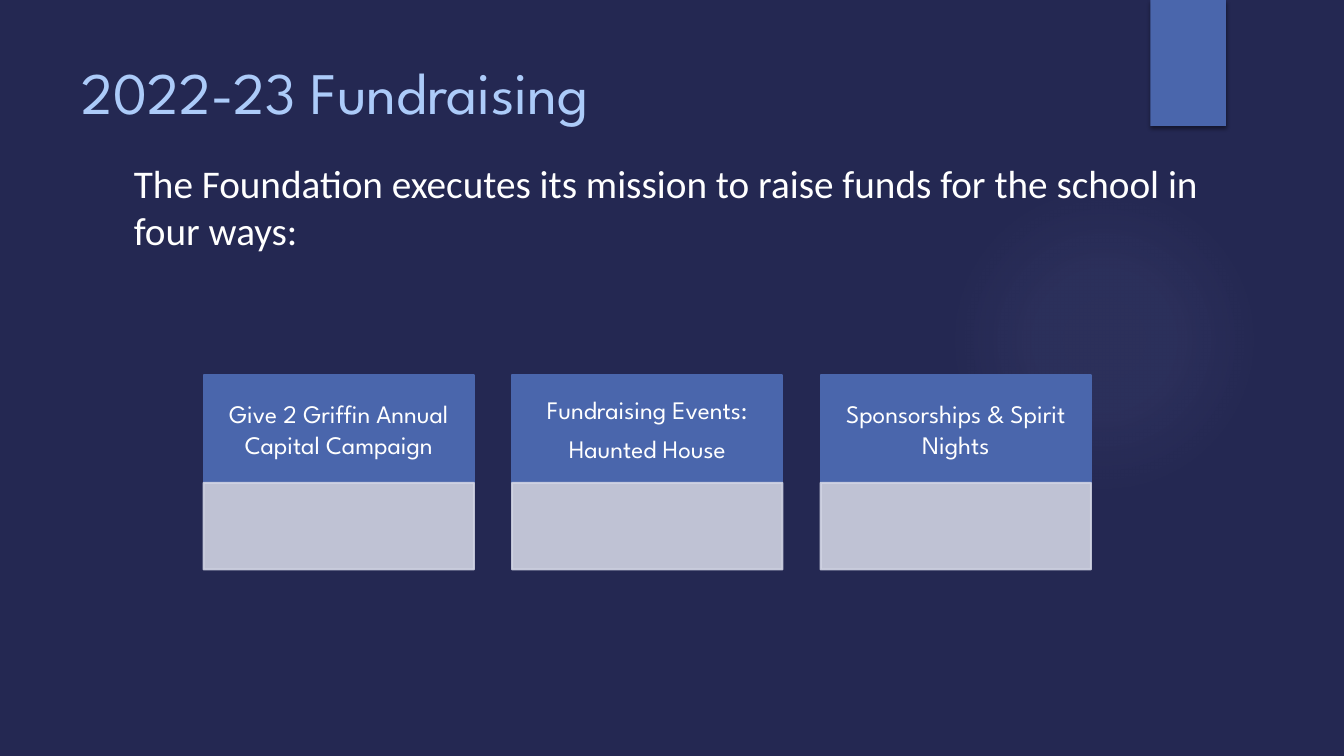
from dataclasses import dataclass

from pptx import Presentation
from pptx.dml.color import RGBColor
from pptx.enum import shapes, text
from pptx.oxml import parse_xml
from pptx.oxml.ns import nsdecls
from pptx.util import Inches, Pt

NAVY = RGBColor(0x24, 0x28, 0x52)
BLUE = RGBColor(0x4A, 0x66, 0xAC)
SKY = RGBColor(0xAC, 0xCB, 0xF9)
MIST = RGBColor(0xD0, 0xD3, 0xE3)
LILAC = RGBColor(0x92, 0x97, 0xCF)
WHITE = RGBColor(0xFF, 0xFF, 0xFF)
DISPLAY_FONT = "League Spartan"
BODY_FONT = "Calibri"

CARD_LEFT, CARD_TOP, CARD_WIDTH, CARD_STEP = 2.02, 3.72, 2.68, 3.06
HEADER_HEIGHT, PANEL_HEIGHT = 1.07, 0.86


@dataclass
class Card:
    lines: list[str]


CARDS = [
    Card(["Give 2 Griffin Annual Capital Campaign"]),
    Card(["Fundraising Events:", "Haunted House"]),
    Card(["Sponsorships & Spirit Nights"]),
]


def add_span(para, words: str, size: float, font: str, color: RGBColor) -> None:
    span = para.add_run()
    span.text = words
    span.font.size = Pt(size)
    span.font.name = font
    span.font.color.rgb = color


def add_block(page, kind, left: float, top: float, width: float, height: float,
              color: RGBColor):
    """Add a flat, shadowless shape without an outline."""
    block = page.shapes.add_shape(
        kind, Inches(left), Inches(top), Inches(width), Inches(height))
    block.shadow.inherit = False
    block.fill.solid()
    block.fill.fore_color.rgb = color
    block.line.fill.background()
    return block


def outline(block, color: RGBColor) -> None:
    block.line.color.rgb = color
    block.line.width = Pt(1.5)


def add_glow(page) -> None:
    """Add the faint round light whose edge fades to nothing."""
    glow = add_block(page, shapes.MSO_SHAPE.OVAL, 9.41, 1.83, 3.08, 3.08, LILAC)
    stops = "".join(
        f'<a:gs pos="{place * 1000}"><a:srgbClr val="{LILAC}">'
        f'<a:alpha val="{opacity * 1000}"/></a:srgbClr></a:gs>'
        for place, opacity in [(0, 7), (36, 6), (69, 0), (100, 0)])
    gradient = parse_xml(
        f'<a:gradFill {nsdecls("a")} rotWithShape="1"><a:gsLst>{stops}</a:gsLst>'
        '<a:path path="circle"><a:fillToRect l="50000" t="50000" r="50000" b="50000"/>'
        '</a:path></a:gradFill>')
    properties = glow.element.spPr
    properties.replace(properties.find("./{*}solidFill"), gradient)


def add_ribbon(page) -> None:
    ribbon = add_block(page, shapes.MSO_SHAPE.RECTANGLE, 11.41, 0, 0.75, 1.25, BLUE)
    ribbon.element.spPr.find("./{*}effectLst").append(parse_xml(
        f'<a:outerShdw {nsdecls("a")} blurRad="{Pt(3)}" dist="{Pt(2)}" dir="5400000" '
        'rotWithShape="0"><a:srgbClr val="000000"><a:alpha val="45000"/></a:srgbClr>'
        '</a:outerShdw>'))


def add_title(page) -> None:
    title = page.shapes.title
    title.left, title.top = Inches(0.71), Inches(0.5)
    title.width, title.height = Inches(10.29), Inches(1.53)
    frame = title.text_frame
    frame.vertical_anchor = text.MSO_ANCHOR.TOP
    para = frame.paragraphs[0]
    para.alignment = text.PP_ALIGN.LEFT
    add_span(para, "2022-23 Fundraising", 42, DISPLAY_FONT, SKY)


def add_intro(page) -> None:
    box = page.shapes.add_textbox(Inches(1.23), Inches(1.53), Inches(11.27), Inches(1.04))
    box.text_frame.word_wrap = True
    add_span(box.text_frame.paragraphs[0],
             "The Foundation executes its mission to raise funds for the school in four ways:",
             28, BODY_FONT, WHITE)


def add_card(page, card: Card, left: float) -> None:
    rectangle = shapes.MSO_SHAPE.RECTANGLE
    header = add_block(page, rectangle, left, CARD_TOP, CARD_WIDTH, HEADER_HEIGHT, BLUE)
    outline(header, BLUE)
    frame = header.text_frame
    frame.word_wrap = True
    frame.vertical_anchor = text.MSO_ANCHOR.MIDDLE
    frame.margin_left = frame.margin_right = Inches(0.14)
    frame.margin_top = frame.margin_bottom = Inches(0.08)
    for index, line in enumerate(card.lines):
        para = frame.add_paragraph() if index else frame.paragraphs[0]
        para.alignment = text.PP_ALIGN.CENTER
        para.space_after = Pt(6.3)
        add_span(para, line, 18, DISPLAY_FONT, WHITE)

    panel = add_block(page, rectangle, left, CARD_TOP + HEADER_HEIGHT,
                      CARD_WIDTH, PANEL_HEIGHT, MIST)
    outline(panel, MIST)
    for color in panel.element.spPr.iterfind(".//{*}srgbClr"):
        color.append(parse_xml(f'<a:alpha {nsdecls("a")} val="90000"/>'))


def main() -> None:
    deck = Presentation()
    deck.slide_width, deck.slide_height = Inches(13.33), Inches(7.5)
    page = deck.slides.add_slide(deck.slide_layouts[5])
    page.background.fill.solid()
    page.background.fill.fore_color.rgb = NAVY
    add_glow(page)
    add_ribbon(page)
    add_title(page)
    for index, card in enumerate(CARDS):
        add_card(page, card, CARD_LEFT + index * CARD_STEP)
    add_intro(page)
    deck.save("out.pptx")


if __name__ == "__main__":
    main()
